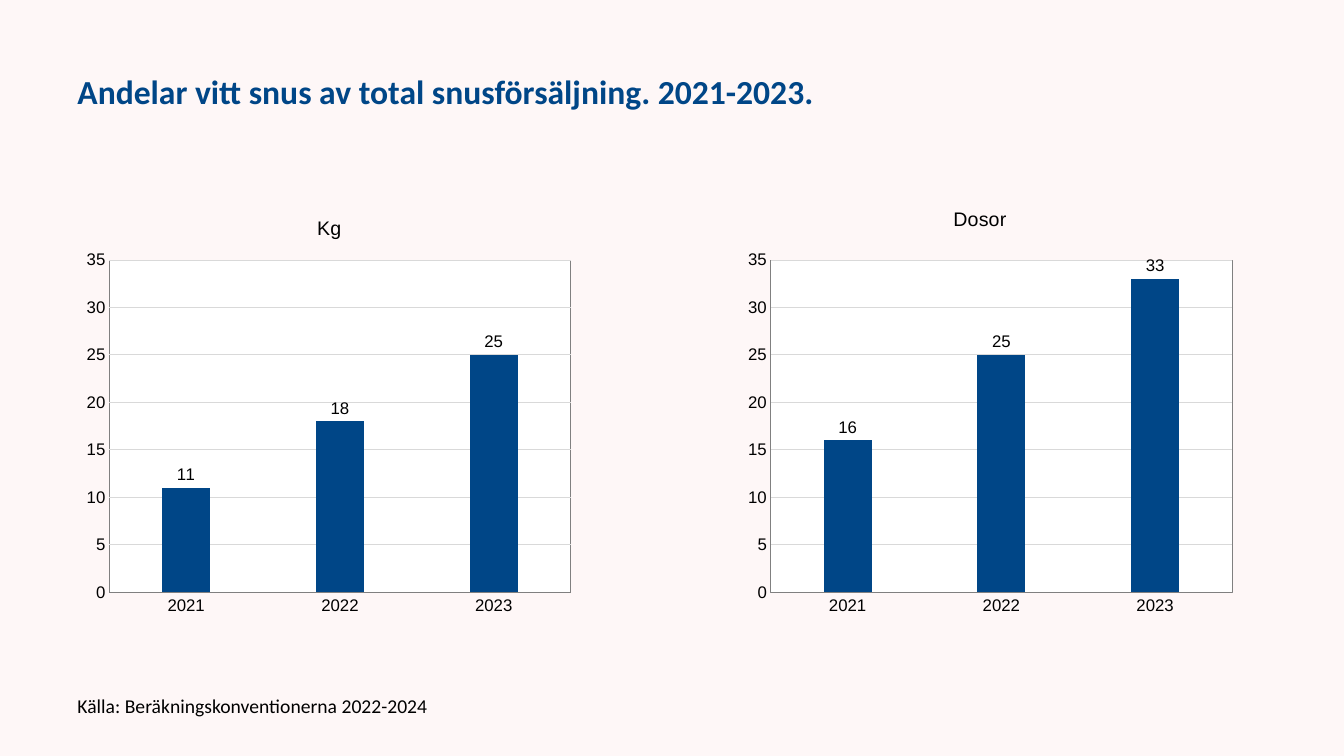
from dataclasses import dataclass

from lxml.etree import SubElement
from pptx import Presentation
from pptx.chart.chart import Chart
from pptx.chart.data import CategoryChartData
from pptx.dml.color import RGBColor
from pptx.enum.chart import XL_CHART_TYPE, XL_LABEL_POSITION, XL_TICK_MARK
from pptx.enum.text import MSO_ANCHOR
from pptx.oxml import parse_xml
from pptx.oxml.ns import nsdecls, qn
from pptx.oxml.xmlchemy import BaseOxmlElement
from pptx.slide import Slide
from pptx.text.text import Font
from pptx.util import Inches, Pt

COLORS = {
    "background": "FEF7F7",
    "blue": "004687",
    "black": "000000",
    "white": "FFFFFF",
    "axis": "808080",
    "grid": "D9D9D9",
}
YEARS = ("2021", "2022", "2023")
CHART_TOP, CHART_WIDTH, CHART_HEIGHT = 1.93, 5, 4.25


@dataclass(frozen=True)
class SharePanel:
    title: str
    left: float
    title_x: float
    title_y: float
    shares: tuple[int, ...]


PANELS = (
    SharePanel("Kg", 0.76, 0.47, 0.04, (11, 18, 25)),
    SharePanel("Dosor", 7.32, 0.42, 0.02, (16, 25, 33)),
)


def color(name: str) -> RGBColor:
    return RGBColor.from_string(COLORS[name])


def format_font(font: Font, *, name: str, size: float,
                fill: str = "black", bold: bool = False) -> None:
    font.name = name
    font.size = Pt(size)
    font.bold = bold
    font.color.rgb = color(fill)


def add_text(slide: Slide, text: str, *, top: float, width: float, height: float,
             size: float, fill: str = "black", bold: bool = False) -> None:
    box = slide.shapes.add_textbox(
        Inches(0.67), Inches(top), Inches(width), Inches(height))
    frame = box.text_frame
    frame.word_wrap = True
    frame.vertical_anchor = MSO_ANCHOR.MIDDLE
    paragraph = frame.paragraphs[0]
    paragraph.line_spacing = 0.9
    run = paragraph.add_run()
    run.text = text
    format_font(run.font, name="Calibri", size=size, fill=fill, bold=bold)


def set_layout(parent: BaseOxmlElement, position: int,
               **settings: str | float) -> None:
    """Place a chart title or plot area by fractions of the chart size."""
    for old_layout in parent.findall(qn("c:layout")):
        parent.remove(old_layout)
    layout = parse_xml(f"<c:layout {nsdecls('c')}/>")
    parent.insert(position, layout)
    manual = SubElement(layout, qn("c:manualLayout"))
    for tag, value in settings.items():
        SubElement(manual, qn(f"c:{tag}")).set("val", str(value))


def format_title(chart: Chart, panel: SharePanel) -> None:
    chart.has_title = True
    title = chart.chart_title
    title.include_in_layout = False
    title.text_frame.text = panel.title
    run = title.text_frame.paragraphs[0].runs[0]
    format_font(run.font, name="Arial", size=14)
    set_layout(chart._chartSpace.chart.find(qn("c:title")), 1,
               xMode="edge", yMode="edge", x=panel.title_x, y=panel.title_y)


def format_plot_area(chart: Chart) -> None:
    plot_area = chart._chartSpace.chart.plotArea
    set_layout(plot_area, 0, layoutTarget="inner", xMode="edge", yMode="edge",
               x=0.065, y=0.153, w=0.915, h=0.776)
    plot_area.append(parse_xml(
        f"<c:spPr {nsdecls('c', 'a')}>"
        f'<a:solidFill><a:srgbClr val="{COLORS["white"]}"/></a:solidFill>'
        f'<a:ln w="{Pt(0.75)}"><a:solidFill><a:srgbClr val="{COLORS["axis"]}"/>'
        "</a:solidFill></a:ln></c:spPr>"))


def format_axes(chart: Chart) -> None:
    for axis in (chart.category_axis, chart.value_axis):
        axis.major_tick_mark = XL_TICK_MARK.NONE
        axis.minor_tick_mark = XL_TICK_MARK.NONE
        format_font(axis.tick_labels.font, name="Arial", size=12)
    category_line = chart.category_axis.format.line
    category_line.color.rgb = color("axis")
    category_line.width = Pt(0.75)

    value_axis = chart.value_axis
    value_axis.minimum_scale, value_axis.maximum_scale = 0, 35
    value_axis.major_unit = 5
    value_axis.tick_labels.number_format = "0"
    value_axis.tick_labels.number_format_is_linked = False
    value_axis.format.line.fill.background()
    grid_line = value_axis.major_gridlines.format.line
    grid_line.color.rgb = color("grid")
    grid_line.width = Pt(0.75)


def format_bars(chart: Chart) -> None:
    plot = chart.plots[0]
    plot.vary_by_categories = False
    plot.gap_width = 219
    plot.overlap = -27
    series = plot.series[0]
    series.format.fill.solid()
    series.format.fill.fore_color.rgb = color("blue")
    labels = series.data_labels
    labels.show_value = True
    labels.number_format = "0"
    labels.number_format_is_linked = False
    labels.position = XL_LABEL_POSITION.OUTSIDE_END
    format_font(labels.font, name="Arial", size=12)


def add_share_chart(slide: Slide, panel: SharePanel) -> None:
    data = CategoryChartData(number_format="0")
    data.categories = YEARS
    data.add_series("Series 1", panel.shares)
    chart = slide.shapes.add_chart(
        XL_CHART_TYPE.COLUMN_CLUSTERED, Inches(panel.left), Inches(CHART_TOP),
        Inches(CHART_WIDTH), Inches(CHART_HEIGHT), data).chart
    format_font(chart.font, name="Arial", size=12)
    chart.has_legend = False
    format_title(chart, panel)
    format_axes(chart)
    format_bars(chart)
    format_plot_area(chart)


def main() -> None:
    presentation = Presentation()
    presentation.slide_width = Inches(13.33)
    presentation.slide_height = Inches(7.5)
    slide = presentation.slides.add_slide(presentation.slide_layouts[6])
    slide.background.fill.solid()
    slide.background.fill.fore_color.rgb = color("background")

    add_text(slide, "Andelar vitt snus av total snusförsäljning. 2021-2023.",
             top=0.3, width=12, height=1.25, size=24, fill="blue", bold=True)
    add_text(slide, "Källa: Beräkningskonventionerna 2022-2024",
             top=6.83, width=6, height=0.37, size=14)
    for panel in PANELS:
        add_share_chart(slide, panel)

    presentation.save("out.pptx")


if __name__ == "__main__":
    main()
